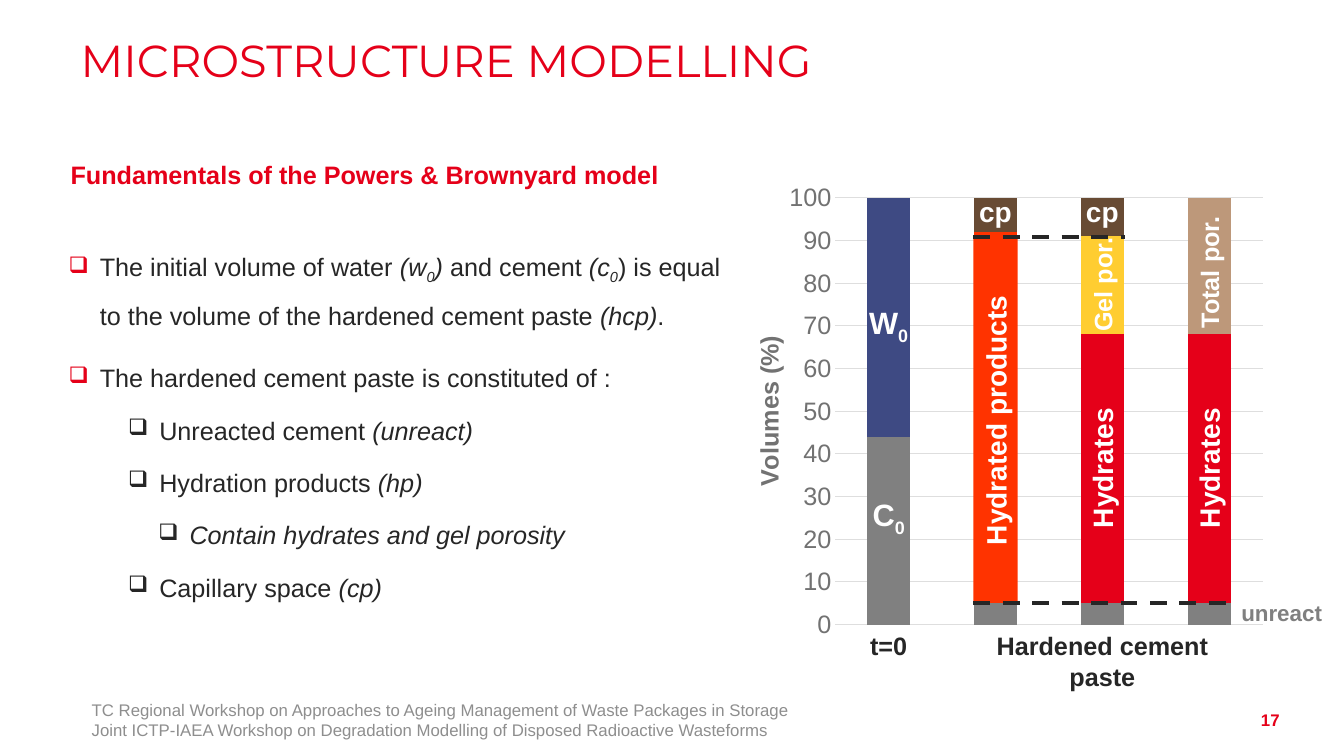
from dataclasses import dataclass

from lxml import etree
from pptx import Presentation
from pptx.chart.data import CategoryChartData
from pptx.dml.color import RGBColor
from pptx.enum.chart import XL_CHART_TYPE, XL_TICK_MARK
from pptx.enum.dml import MSO_LINE
from pptx.enum.shapes import MSO_CONNECTOR, MSO_SHAPE
from pptx.enum.text import MSO_ANCHOR, PP_ALIGN
from pptx.oxml.ns import qn
from pptx.util import Inches, Pt

STACKED, NO_TICK = XL_CHART_TYPE.COLUMN_STACKED, XL_TICK_MARK.NONE
DASH, STRAIGHT, RECTANGLE = MSO_LINE.DASH, MSO_CONNECTOR.STRAIGHT, MSO_SHAPE.RECTANGLE
TOP, MIDDLE = MSO_ANCHOR.TOP, MSO_ANCHOR.MIDDLE
LEFT, CENTER, RIGHT, JUSTIFY = PP_ALIGN.LEFT, PP_ALIGN.CENTER, PP_ALIGN.RIGHT, PP_ALIGN.JUSTIFY


@dataclass(frozen=True)
class Theme:
    red: str = "E50019"
    ink: str = "262626"
    white: str = "FFFFFF"
    footer: str = "8E8E8E"
    axis: str = "727272"
    grid: str = "DEDEDE"
    cement: str = "808080"
    water: str = "3E4A83"
    products: str = "FF3300"
    gel: str = "FFCD31"
    capillary: str = "684B34"
    porosity: str = "BD987A"
    font: str = "Arial"
    title_font: str = "Montserrat"
    title_size: int = 32
    symbol_size: int = 22
    bar_size: int = 20
    body_size: int = 18
    note_size: int = 16
    footer_size: int = 12


THEME = Theme()
BAR_START, BAR_STEP = 66.12, 7.95
AXIS_BASE, AXIS_UNIT = 82.64, 0.56
PLOT = {"x": 0.165, "y": 0.037, "w": 0.808, "h": 0.911}


def style_font(font, size=THEME.body_size, color=THEME.ink, bold=False, italic=False, face=THEME.font):
    font.size, font.bold, font.italic, font.name = Pt(size), bold, italic, face
    font.color.rgb = RGBColor.from_string(color)


def write(paragraph, text, italic=False, sub=False, **style):
    run = paragraph.add_run()
    run.text = text
    style_font(run.font, italic=italic, **style)
    if sub:
        run.font._element.set("baseline", "-25000")


def on_bar(index, value):
    return BAR_START + index * BAR_STEP, AXIS_BASE - value * AXIS_UNIT


class Slide:
    def __init__(self, deck, theme):
        self.deck, self.theme = deck, theme
        self.shapes = deck.slides.add_slide(deck.slide_layouts[6]).shapes

    def x(self, share):
        return int(self.deck.slide_width * share / 100)

    def y(self, share):
        return int(self.deck.slide_height * share / 100)

    def box(self, left, top, width, height):
        return self.x(left), self.y(top), self.x(width), self.y(height)

    def text(self, area, paragraphs, align=LEFT, anchor=TOP, inset=0.1, line=None, fill=None, turn=0, **style):
        if fill:
            holder = self.shapes.add_shape(RECTANGLE, *self.box(*area))
            holder.shadow.inherit = False
            holder.fill.solid()
            holder.fill.fore_color.rgb = RGBColor.from_string(fill)
            holder.line.fill.background()
        else:
            holder = self.shapes.add_textbox(*self.box(*area))
        holder.rotation = turn
        frame = holder.text_frame
        frame.word_wrap, frame.vertical_anchor = True, anchor
        frame.margin_left = frame.margin_right = Inches(inset)
        for number, pieces in enumerate(paragraphs):
            paragraph = frame.add_paragraph() if number else frame.paragraphs[0]
            paragraph.alignment, paragraph.line_spacing = align, line
            for text, marks in pieces:
                write(paragraph, text, italic="i" in marks, sub="s" in marks, **style)
        return frame

    def label(self, centre, extent, text, sub="", **style):
        area = centre[0] - extent[0] / 2, centre[1] - extent[1] / 2, *extent
        pieces = [(text, "")] + ([(sub, "s")] if sub else [])
        self.text(area, [pieces], align=CENTER, bold=True, **style)

    def bullets(self, area, items):
        frame = self.text(area, [pieces for _, pieces in items], align=JUSTIFY, inset=0, line=1.5)
        for number, (paragraph, (level, _)) in enumerate(zip(frame.paragraphs, items)):
            properties = paragraph._p.get_or_add_pPr()
            properties.set("marL", str(Inches((0.31, 0.9, 1.2)[level])))
            properties.set("indent", str(Inches(-0.31)))
            color = etree.SubElement(properties, qn("a:buClr"))
            etree.SubElement(color, qn("a:srgbClr"), val=self.theme.ink if level else self.theme.red)
            etree.SubElement(properties, qn("a:buSzPct"), val="90000")
            etree.SubElement(properties, qn("a:buChar"), char="❑")
            if number:
                paragraph.space_before = Pt(5 if level else 12)

    def dashes(self, first_bar, last_bar, value):
        start, height = on_bar(first_bar, value)
        end, _ = on_bar(last_bar, value)
        line = self.shapes.add_connector(
            STRAIGHT, self.x(start - 1.65), self.y(height), self.x(end + 1.65), self.y(height))
        line.line.width, line.line.dash_style = Pt(3), DASH
        line.line.color.rgb = RGBColor.from_string(self.theme.ink)
        etree.SubElement(line._element.spPr, qn("a:effectLst"))

    def volumes(self, area, series):
        data = CategoryChartData()
        data.categories = ["1", "2", "3", "4"]
        for number, (values, _) in enumerate(series, 1):
            data.add_series(f"Series {number}", values)
        chart = self.shapes.add_chart(STACKED, *self.box(*area), data).chart
        chart.has_legend = chart.has_title = False
        style_font(chart.font)
        plot = chart.plots[0]
        plot.gap_width, plot.overlap, plot.vary_by_categories = 150, 100, False
        for bars, (_, color) in zip(plot.series, series):
            bars.format.fill.solid()
            bars.format.fill.fore_color.rgb = RGBColor.from_string(color)
        chart.category_axis.visible = False
        axis = chart.value_axis
        axis.minimum_scale, axis.maximum_scale, axis.major_unit = 0, 100, 10
        axis.major_tick_mark = axis.minor_tick_mark = NO_TICK
        axis.format.line.fill.background()
        axis.major_gridlines.format.line.color.rgb = RGBColor.from_string(self.theme.grid)
        axis.major_gridlines.format.line.width = Pt(0.75)
        style_font(axis.tick_labels.font, color=self.theme.axis)
        write(axis.axis_title.text_frame.paragraphs[0], "Volumes (%)", color=self.theme.axis, bold=True)
        area_xml = chart._chartSpace.chart.plotArea
        for old in area_xml.findall(qn("c:layout")):
            area_xml.remove(old)
        layout = etree.Element(qn("c:layout"))
        area_xml.insert(0, layout)
        manual = etree.SubElement(layout, qn("c:manualLayout"))
        settings = {"layoutTarget": "inner", "xMode": "edge", "yMode": "edge", **PLOT}
        for tag, value in settings.items():
            etree.SubElement(manual, qn(f"c:{tag}"), val=str(value))


def main():
    deck = Presentation()
    deck.slide_width, deck.slide_height = Inches(13.33), Inches(7.5)
    t = THEME
    slide = Slide(deck, t)
    slide.text((6, 4.5, 88, 12.7), [[("MICROSTRUCTURE MODELLING", "")]], inset=0, line=0.9,
               size=t.title_size, color=t.red, face=t.title_font)
    slide.text((5.25, 20.4, 88, 9.5), [[("Fundamentals of the Powers & Brownyard model", "")]],
               inset=0, color=t.red, bold=True)
    slide.bullets((5.1, 30.27, 48.5, 60.8), [
        (0, [("The initial volume of water ", ""), ("(w", "i"), ("0", "is"), (") ", "i"),
             ("and cement ", ""), ("(c", "i"), ("0", "is"),
             (") is equal to the volume of the hardened cement paste ", ""), ("(hcp)", "i"), (".", "")]),
        (0, [("The hardened cement paste is constituted of :", "")]),
        (1, [("Unreacted cement ", ""), ("(unreact)", "i")]),
        (1, [("Hydration products ", ""), ("(hp)", "i")]),
        (2, [("Contain hydrates and gel porosity", "i")]),
        (1, [("Capillary space ", ""), ("(cp)", "i")])])
    slide.text((6.08, 92.53, 72.5, 5.33), [
        [("TC Regional Workshop on Approaches to Ageing Management of Waste Packages in Storage", "")],
        [("Joint ICTP-IAEA Workshop on Degradation Modelling of Disposed Radioactive Wasteforms", "")],
    ], anchor=MIDDLE, size=t.footer_size, color=t.footer)
    slide.text((90.25, 92.53, 5.7, 5.33), [[("17", "")]], align=RIGHT, anchor=MIDDLE,
               size=t.footer_size, color=t.red, bold=True)
    slide.volumes((55.66, 23.87, 39.38, 62), [
        ((44, 5, 5, 5), t.cement),
        ((56, None, None, None), t.water),
        ((None, 87, None, None), t.products),
        ((None, None, 63, 63), t.red),
        ((None, None, 23, None), t.gel),
        ((None, 9, 9, None), t.capillary),
        ((None, None, None, 32), t.porosity)])
    slide.label(on_bar(0, -4.8), (5.85, 5.33), "t=0")
    slide.label(on_bar(2, -8.7), (19.2, 9.47), "Hardened cement paste")
    slide.label((95.36, 81), (9.2, 4.93), "unreact", size=t.note_size, color=t.cement)
    for symbol, value in (("C", 26), ("W", 71.4)):
        slide.label(on_bar(0, value), (10.28, 6.27), symbol, "0", size=t.symbol_size, color=t.white)
    slide.label(on_bar(1, 48.3), (27.15, 5.87), "Hydrated products", size=t.bar_size,
                color=t.white, fill=t.products, turn=270, anchor=MIDDLE)
    for bar in (2, 3):
        slide.label(on_bar(bar, 37), (17.33, 5.87), "Hydrates", size=t.bar_size, color=t.white, turn=270)
    for bar, name, value in ((2, "Gel por.", 80.3), (3, "Total por.", 83.2)):
        slide.label(on_bar(bar, value), (10.88, 5.33), name, color=t.white, turn=270)
    for bar in (1, 2):
        slide.label(on_bar(bar, 97.5), (10.88, 5.87), "cp", size=t.bar_size, color=t.white)
    slide.dashes(1, 2, 91.6)
    slide.dashes(1, 3, 5.2)
    deck.save("out.pptx")


if __name__ == "__main__":
    main()
